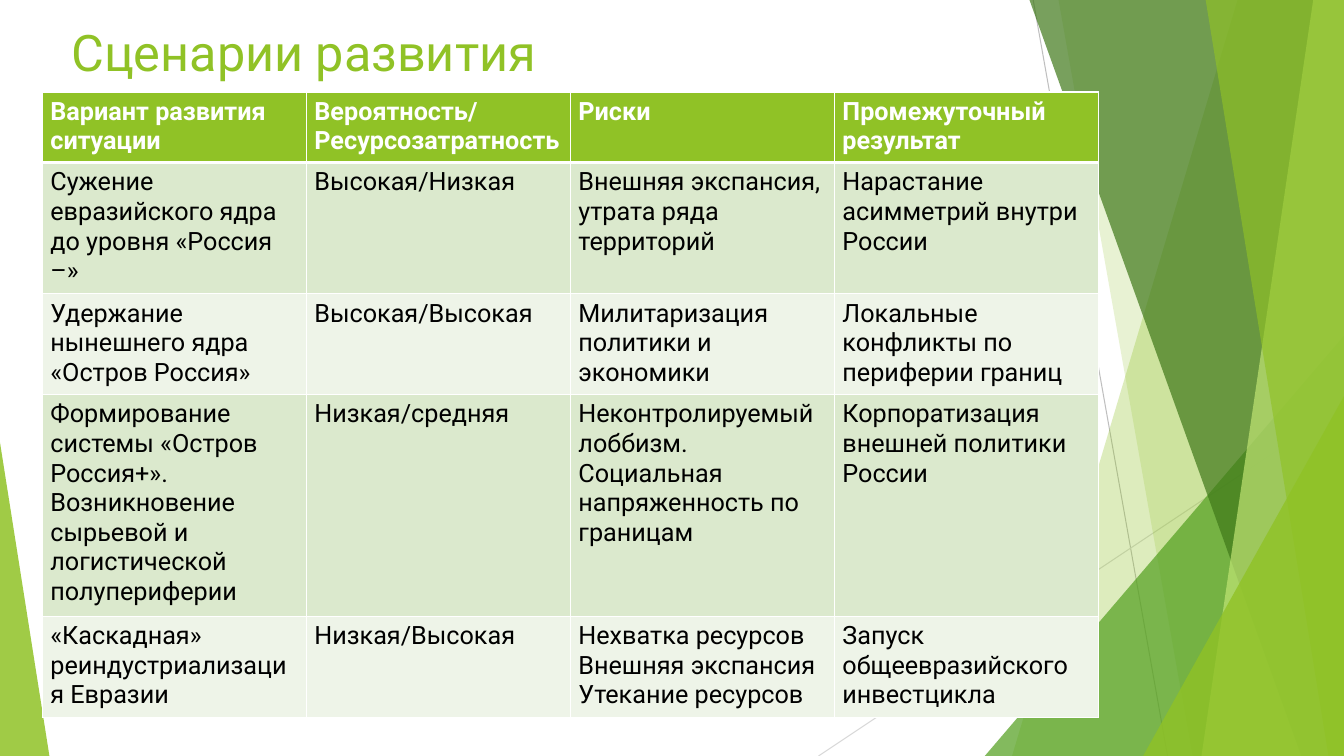
from lxml import etree
from pptx import Presentation
from pptx import util as u
from pptx.dml import color
from pptx.enum import shapes, text
from pptx.oxml import ns

Pt = u.Pt
THEME = {
    "font": "Roboto", "title_size": 36, "cell_size": 18,
    "green": "90C226", "leaf": "54A021", "forest": "3F7819", "lime": "C0E474",
    "band": "DBE9CD", "pale": "EEF4E8", "white": "FFFFFF", "black": "000000",
    "line": "BFBFBF", "light_line": "D9D9D9",
}


def rgb(name):
    return color.RGBColor.from_string(THEME[name])


def write(tf, content, formats):
    tf.word_wrap = True
    for i, line in enumerate(content.split("\n")):
        p = tf.paragraphs[0] if i == 0 else tf.add_paragraph()
        p.alignment = text.PP_ALIGN.LEFT
        r = p.add_run()
        r.text = line
        r.font.color.rgb = rgb(formats["color"])
        for name in ("name", "size", "bold"):
            setattr(r.font, name, formats[name])


prs = Presentation()
prs.slide_width, prs.slide_height = Pt(960), Pt(540)
s = prs.slides.add_slide(prs.slide_layouts[6])

for x1, y1, x2, y2, tone in [
    (738, 0, 834, 540, "line"),
    (960, 290, 584.64, 540, "light_line"),
]:
    line = s.shapes.add_connector(shapes.MSO_CONNECTOR.STRAIGHT, Pt(x1), Pt(y1), Pt(x2), Pt(y2))
    line.line.color.rgb = rgb(tone)
    line.line.width = Pt(0.75)
    etree.SubElement(line._element.spPr, ns.qn("a:effectLst"))

facets = [
    ("blade", (884.16, 722.88), "green", 30),
    ("blade", (756, 851.76), "green", 20),
    ("triangle", (703.44, 239.76, 256.56, 1), "leaf", 72),
    ("blade", (735.12, 929.52), "forest", 70),
    ("blade", (938.16, 858.24), "lime", 70),
    ("blade", (861.12, 948.96), "green", 65),
    ("triangle", (816.48, 282.96, 143.52, 1), "green", 80),
    ("triangle", (0, 316.08, 35.28, 0), "green", 85),
]
for kind, geometry, tone, opacity in facets:
    if kind == "blade":
        top_x, bottom_x = geometry
        outline = s.shapes.build_freeform(Pt(top_x), Pt(-0.72))
        outline.add_line_segments(
            [(Pt(960), Pt(-0.72)), (Pt(960), Pt(540)), (Pt(bottom_x), Pt(540))])
        sp = outline.convert_to_shape()
    else:
        left, top, width, apex = geometry
        sp = s.shapes.add_shape(shapes.MSO_SHAPE.ISOSCELES_TRIANGLE,
                                Pt(left), Pt(top), Pt(width), Pt(540 - top))
        sp.adjustments[0] = apex
    sp.shadow.inherit = False
    sp.line.fill.background()
    sp.fill.solid()
    sp.fill.fore_color.rgb = rgb(tone)
    tint = sp._element.spPr.find(ns.qn("a:solidFill"))[0]
    etree.SubElement(tint, ns.qn("a:alpha"), val=str(opacity * 1000))

title = s.shapes.add_textbox(Pt(43.92), Pt(7.2), Pt(676.8), Pt(58.32))
title.text_frame.vertical_anchor = text.MSO_ANCHOR.MIDDLE
write(title.text_frame, "Сценарии развития",
      {"name": THEME["font"], "size": Pt(THEME["title_size"]), "bold": False, "color": "green"})

rows = [
    (48.5, ["Вариант развития ситуации", "Вероятность/ Ресурсозатратность",
            "Риски", "Промежуточный результат"]),
    (92, ["Сужение евразийского ядра до уровня «Россия –»", "Высокая/Низкая",
          "Внешняя экспансия, утрата ряда территорий",
          "Нарастание асимметрий внутри России"]),
    (70.5, ["Удержание нынешнего ядра «Остров Россия»", "Высокая/Высокая",
            "Милитаризация политики и экономики",
            "Локальные конфликты по периферии границ"]),
    (155, ["Формирование системы «Остров Россия+». Возникновение сырьевой и "
           "логистической полупериферии", "Низкая/средняя",
           "Неконтролируемый лоббизм.\nСоциальная напряженность по границам",
           "Корпоратизация внешней политики России"]),
    (70.5, ["«Каскадная» реиндустриализация Евразии", "Низкая/Высокая",
            "Нехватка ресурсов\nВнешняя экспансия\nУтекание ресурсов",
            "Запуск общеевразийского инвестцикла"]),
]
col_width = 188.6
table = s.shapes.add_table(len(rows), 4, Pt(30.24), Pt(65.7), Pt(4 * col_width),
                           Pt(sum(height for height, _ in rows))).table
for column in table.columns:
    column.width = Pt(col_width)

for i, (height, contents) in enumerate(rows):
    table.rows[i].height = Pt(height)
    header = i == 0
    tone = "green" if header else "band" if i % 2 else "pale"
    formats = {"name": THEME["font"], "size": Pt(THEME["cell_size"]), "bold": header,
               "color": "white" if header else "black"}
    borders = {"lnL": 1, "lnR": 1, "lnT": 3 if i == 1 else 1, "lnB": 3 if header else 1}
    for j, content in enumerate(contents):
        cell = table.cell(i, j)
        for side, inset in {"left": 5.76, "right": 5.76, "top": 3.6, "bottom": 3.6}.items():
            setattr(cell, "margin_" + side, Pt(inset))
        write(cell.text_frame, content, formats)
        tc_pr = cell._tc.get_or_add_tcPr()
        for tag, width in borders.items():
            ln = etree.SubElement(tc_pr, ns.qn("a:" + tag), w=str(Pt(width)))
            fill = etree.SubElement(ln, ns.qn("a:solidFill"))
            etree.SubElement(fill, ns.qn("a:srgbClr"), val=THEME["white"])
        cell.fill.solid()
        cell.fill.fore_color.rgb = rgb(tone)

prs.save("out.pptx")
